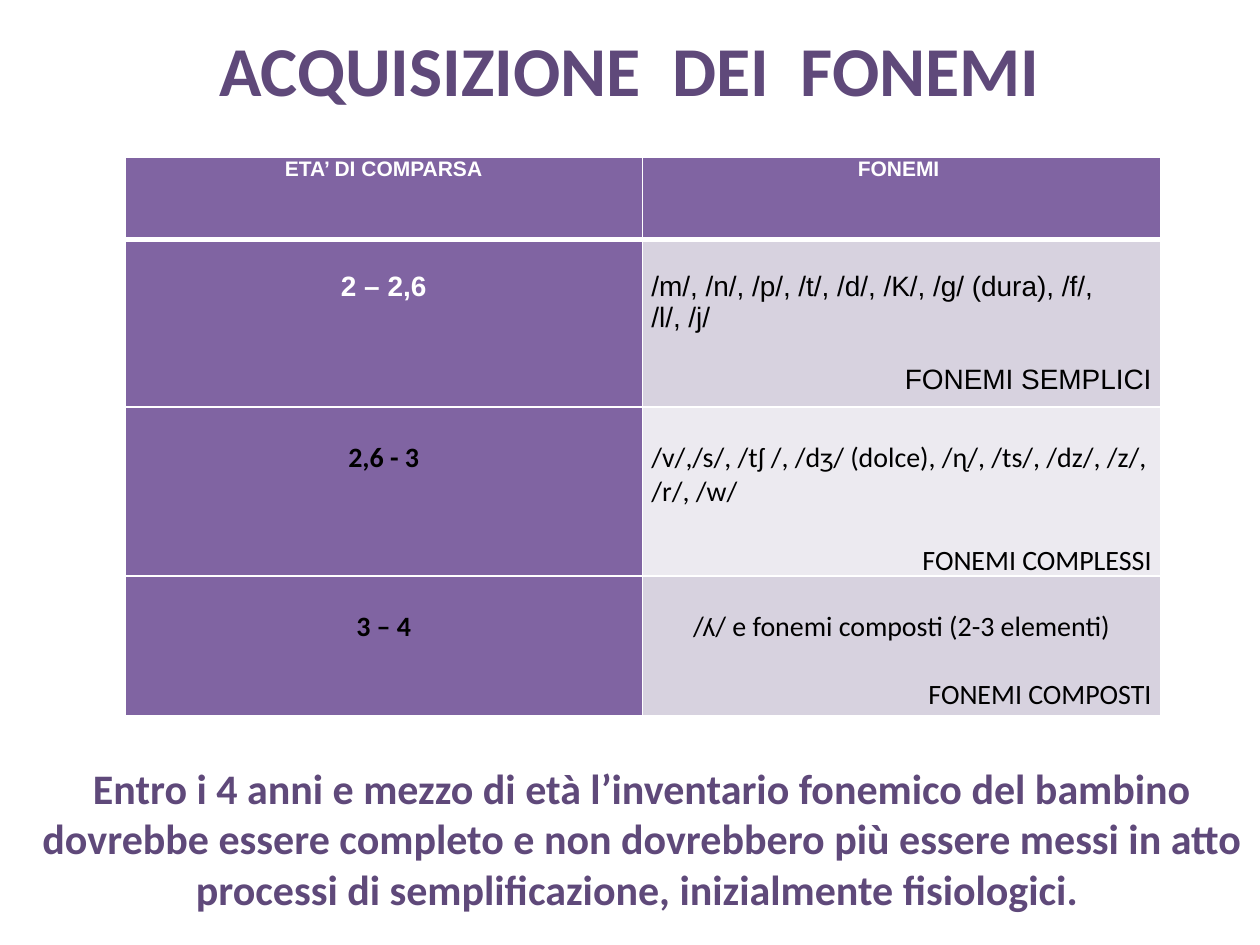
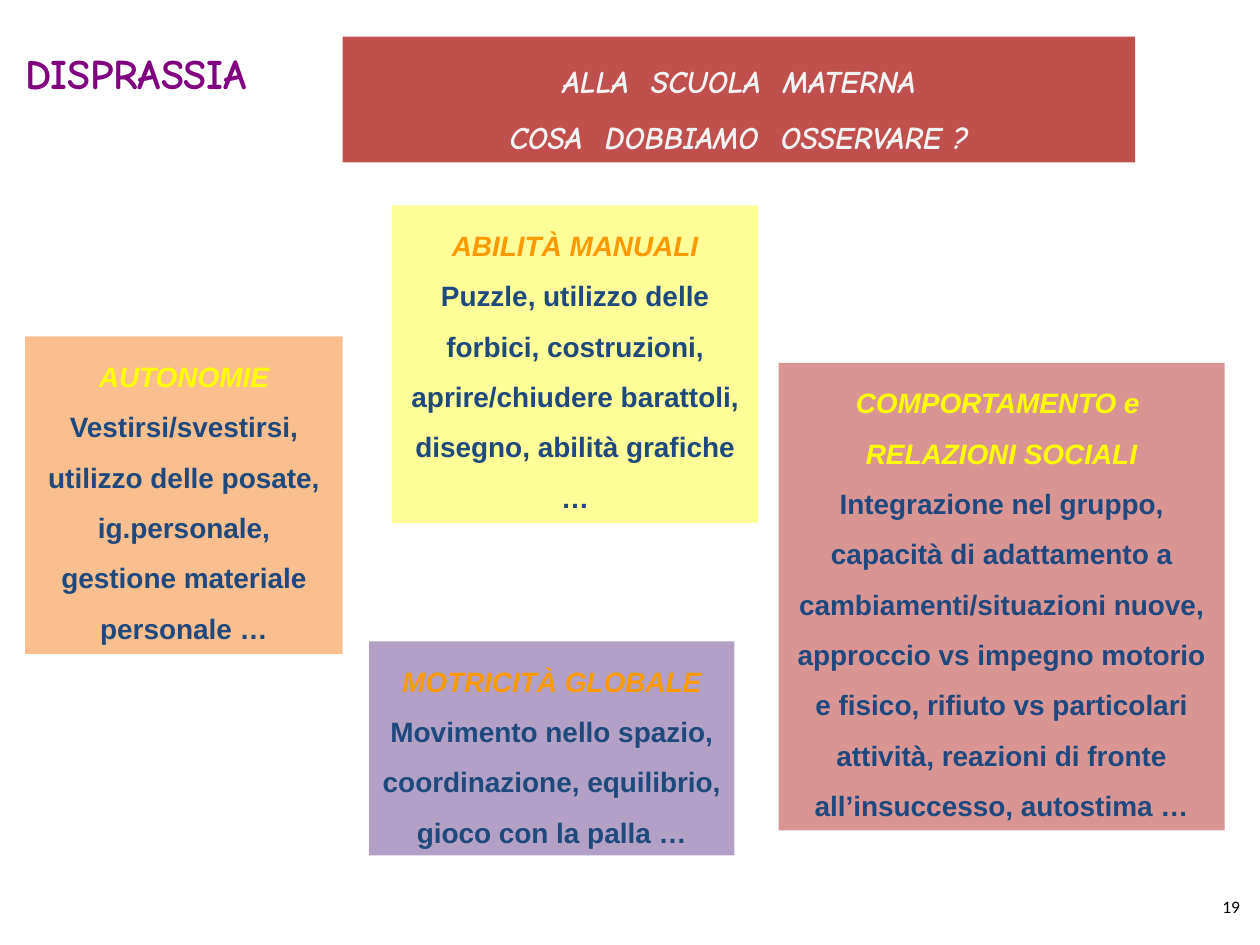
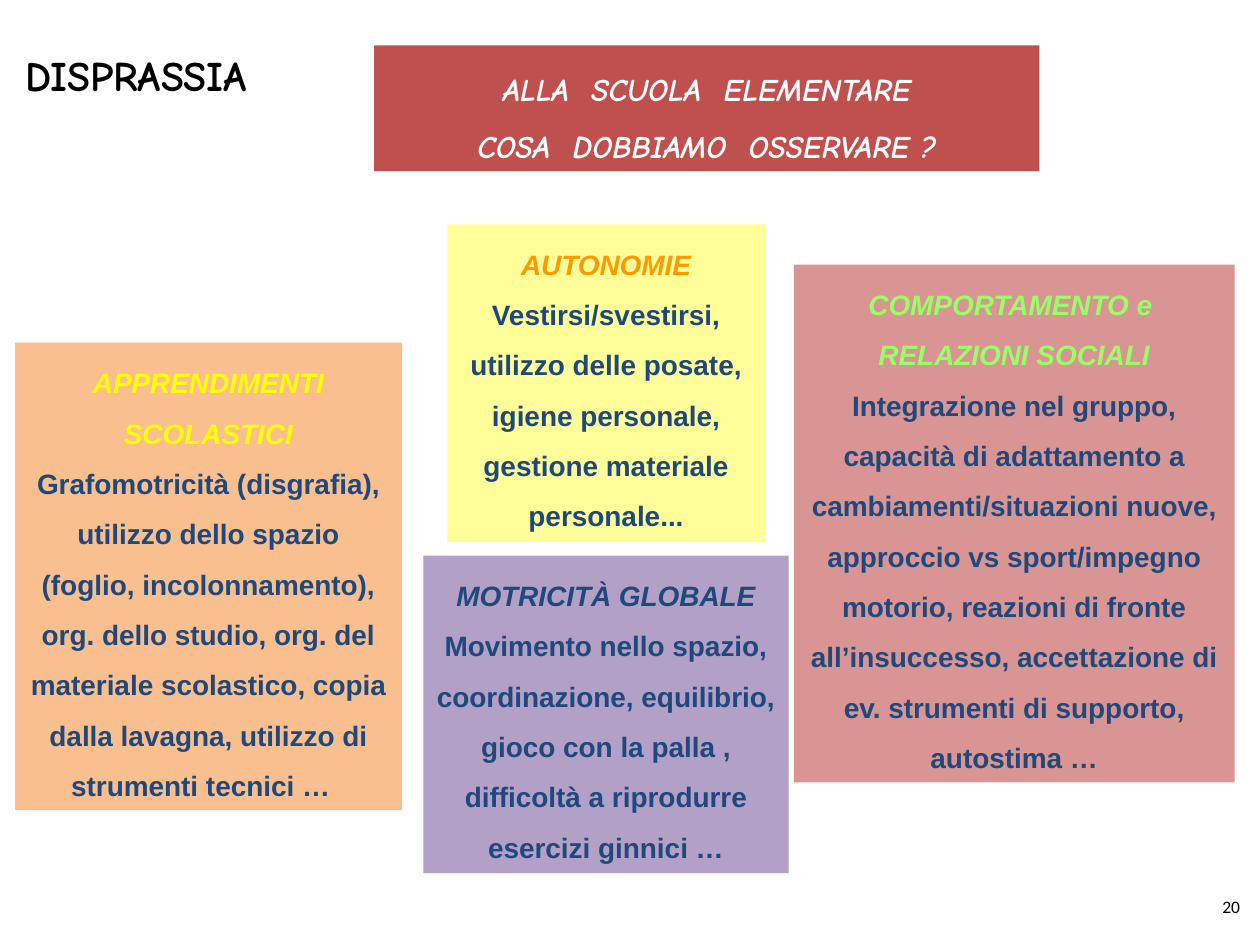
from pptx import Presentation
from pptx.dml.color import RGBColor
from pptx.enum import shapes, text
from pptx.oxml import parse_xml
from pptx.oxml.ns import nsdecls
from pptx.util import Inches, Pt

WHITE = RGBColor(0xFF, 0xFF, 0xFF)
BLACK = RGBColor(0, 0, 0)
PLUM = RGBColor(0x5F, 0x49, 0x7A)
VIOLET = RGBColor(0x80, 0x64, 0xA2)
LILAC = RGBColor(0xD7, 0xD2, 0xDF)
PALE_LILAC = RGBColor(0xEC, 0xEA, 0xF0)
PURPLE = RGBColor(0x80, 0, 0x80)
RED = RGBColor(0xC0, 0x50, 0x4D)
OFF_WHITE = RGBColor(0xF2, 0xF2, 0xF2)
PEACH = RGBColor(0xFA, 0xBF, 0x8E)
CREAM = RGBColor(0xFF, 0xFE, 0x99)
LAVENDER = RGBColor(0xB2, 0xA0, 0xC7)
ROSE = RGBColor(0xD9, 0x95, 0x93)
YELLOW = RGBColor(0xFF, 0xFF, 0)
ORANGE = RGBColor(0xFF, 0x99, 0)
GREEN = RGBColor(0x99, 0xFF, 0x66)
NAVY = RGBColor(0x1F, 0x49, 0x7D)

LEFT, CENTER, RIGHT = (text.PP_ALIGN.LEFT, text.PP_ALIGN.CENTER, text.PP_ALIGN.RIGHT)

HEADING = dict(name="Calibri", bold=True, color=PLUM)
TOPIC = dict(name="Comic Neue", size=24, bold=True)
BAND = dict(name="Comic Neue", size=18, bold=True, italic=True)
AREA = dict(name="Arial", size=16, bold=True)
PAGE_NUMBER = dict(name="Calibri", size=10, color=BLACK)
COLUMN_HEAD = dict(name="Arial", size=12, bold=True, color=WHITE)

PHONEME_TITLE = "ACQUISIZIONE  DEI  FONEMI"
PHONEME_SUMMARY = (
    "Entro i 4 anni e mezzo di età l’inventario fonemico del bambino dovrebbe essere "
    "completo e non dovrebbero più essere messi in atto processi di semplificazione, "
    "inizialmente fisiologici. ")
PHONEME_HEADS = ["ETA’ DI COMPARSA", "FONEMI "]
# age, phonemes, their alignment, group, font, age colour, fill, row height
PHONEME_ROWS = [
    ("2 – 2,6", "/m/, /n/, /p/, /t/, /d/, /K/, /g/ (dura), /f/, /l/, /j/", LEFT,
     "FONEMI SEMPLICI", "Arial", WHITE, LILAC, 1.33),
    ("2,6 - 3", "/v/,/s/, /tʃ /, /dʒ/ (dolce), /ɳ/, /ts/, /dz/, /z/, /r/, /w/", LEFT,
     "FONEMI COMPLESSI", "Calibri", BLACK, PALE_LILAC, 1.33),
    ("3 – 4", "/ʎ/ e fonemi composti (2-3 elementi)", CENTER,
     "FONEMI COMPOSTI", "Calibri", BLACK, LILAC, 1.11),
]
HEAD_HEIGHT = 0.65
LINE_HEIGHT = {"Arial": 0.25, "Calibri": 0.27}

SOCIAL = ["COMPORTAMENTO e ", "RELAZIONI SOCIALI"]
QUESTION = "COSA  DOBBIAMO  OSSERVARE ?"
# areas: place, fill, heading colour, heading lines, what to observe
SCHOOLS = [
    dict(number="19", topic_color=PURPLE, topic_top=0.13,
         school="ALLA  SCUOLA  MATERNA", band=(2.72, 0.29, 6.29, 1), band_color=OFF_WHITE,
         areas=[
             ((0.2, 2.67, 2.52, 2.52), PEACH, YELLOW, ["AUTONOMIE"],
              "Vestirsi/svestirsi, utilizzo delle posate, ig.personale, "
              "gestione materiale personale …"),
             ((3.11, 1.63, 2.91, 2.52), CREAM, ORANGE, ["ABILITÀ MANUALI"],
              "Puzzle, utilizzo delle forbici, costruzioni, aprire/chiudere barattoli, "
              "disegno, abilità grafiche …"),
             ((2.93, 5.09, 2.9, 1.7), LAVENDER, ORANGE, ["MOTRICITÀ GLOBALE"],
              "Movimento nello spazio, coordinazione, equilibrio, gioco con la palla …"),
             ((6.18, 2.88, 3.54, 3.71), ROSE, YELLOW, SOCIAL,
              "Integrazione nel gruppo, capacità di adattamento a cambiamenti/situazioni "
              "nuove, approccio vs impegno motorio e fisico, rifiuto vs particolari "
              "attività, reazioni di fronte all’insuccesso, autostima …"),
         ]),
    dict(number="20", topic_color=BLACK, topic_top=0.14,
         school="ALLA  SCUOLA  ELEMENTARE", band=(2.97, 0.36, 5.28, 1), band_color=WHITE,
         areas=[
             ((3.55, 1.78, 2.52, 2.52), CREAM, ORANGE, ["AUTONOMIE"],
              "Vestirsi/svestirsi, utilizzo delle posate, igiene personale, "
              "gestione materiale personale..."),
             ((3.36, 4.41, 2.9, 2.52), LAVENDER, NAVY, ["MOTRICITÀ GLOBALE"],
              "Movimento nello spazio, coordinazione, equilibrio, gioco con la palla , "
              "difficoltà a riprodurre esercizi ginnici …"),
             ((0.12, 2.72, 3.07, 3.71), PEACH, YELLOW, ["APPRENDIMENTI SCOLASTICI"],
              "Grafomotricità (disgrafia), utilizzo dello spazio (foglio, incolonnamento), "
              "org. dello studio, org. del materiale scolastico, copia dalla lavagna, "
              "utilizzo di strumenti tecnici …  "),
             ((6.3, 2.1, 3.5, 4.11), ROSE, GREEN, SOCIAL,
              "Integrazione nel gruppo, capacità di adattamento a cambiamenti/situazioni "
              "nuove, approccio vs sport/impegno motorio, reazioni di fronte "
              "all’insuccesso, accettazione di ev. strumenti di supporto, autostima …"),
         ]),
]


def write(frame, lines, spacing=None):
    """Fill a text frame with (words, alignment, format, inches before) lines."""
    for i, (words, align, style, before) in enumerate(lines):
        paragraph = frame.add_paragraph() if i else frame.paragraphs[0]
        paragraph.alignment = align
        if spacing:
            paragraph.line_spacing = spacing
        if before:
            paragraph.space_before = Inches(before)
        run = paragraph.add_run()
        run.text = words
        for key, value in style.items():
            if key == "color":
                run.font.color.rgb = value
            else:
                setattr(run.font, key, Pt(value) if key == "size" else value)


def add_box(slide, place, lines, fill=None, spacing=None, grow=True):
    place = [Inches(n) for n in place]
    if fill is None:
        box = slide.shapes.add_textbox(*place)
    else:
        box = slide.shapes.add_shape(shapes.MSO_SHAPE.RECTANGLE, *place)
        box.shadow.inherit = False
        box.fill.solid()
        box.fill.fore_color.rgb = fill
        box.line.fill.background()
    frame = box.text_frame
    frame.word_wrap = True
    frame.vertical_anchor = text.MSO_ANCHOR.TOP
    if grow:
        frame.auto_size = text.MSO_AUTO_SIZE.SHAPE_TO_FIT_TEXT
    write(frame, lines, spacing)


def fill_cell(cell, fill, lines, top=0, edges=(1, 1)):
    """Style a cell; edges are the top and bottom border widths in points."""
    properties = cell._tc.get_or_add_tcPr()
    for side, width in zip("LRTB", (1, 1, *edges)):
        properties.append(parse_xml(
            f'<a:ln{side} {nsdecls("a")} w="{Pt(width)}"><a:solidFill>'
            f'<a:srgbClr val="{WHITE}"/></a:solidFill></a:ln{side}>'))
    cell.fill.solid()
    cell.fill.fore_color.rgb = fill
    cell.margin_left = cell.margin_right = Inches(0.07)
    cell.margin_top, cell.margin_bottom = Inches(top), 0
    write(cell.text_frame, lines)


def add_phoneme_table(slide):
    heights = [HEAD_HEIGHT] + [row[-1] for row in PHONEME_ROWS]
    table = slide.shapes.add_table(len(heights), 2, Inches(0.99), Inches(1.25),
                                   Inches(8.22), Inches(sum(heights))).table
    table.horz_banding = False
    for row, height in zip(table.rows, heights):
        row.height = Inches(height)
    for column, head in enumerate(PHONEME_HEADS):
        fill_cell(table.cell(0, column), VIOLET, [(head, CENTER, COLUMN_HEAD, 0)],
                  edges=(1, 3))
    for i, (age, phonemes, align, group, font, color, fill, _) in enumerate(PHONEME_ROWS, 1):
        gap = LINE_HEIGHT[font]
        edges = (3 if i == 1 else 1, 1)
        plain = dict(name=font, size=16, bold=False, color=BLACK)
        bold = dict(plain, bold=True, color=color)
        fill_cell(table.cell(i, 0), VIOLET, [(age, CENTER, bold, 0)], gap, edges)
        fill_cell(table.cell(i, 1), fill,
                  [(phonemes, align, plain, 0), (group, RIGHT, plain, gap)], gap, edges)


def add_phoneme_slide(slide):
    add_box(slide, (1.09, 0.16, 7.81, 0.77),
            [(PHONEME_TITLE, CENTER, dict(HEADING, size=40), 0)])
    add_phoneme_table(slide)
    add_box(slide, (0.23, 6, 9.73, 1.31),
            [(PHONEME_SUMMARY, CENTER, dict(HEADING, size=24), 0)])


def add_school_slide(slide, number, topic_color, topic_top, school, band, band_color, areas):
    add_box(slide, (7.61, 7.06, 2.33, 0.36), [(number, RIGHT, PAGE_NUMBER, 0)], grow=False)
    band_style = dict(BAND, color=band_color)
    add_box(slide, band, [(line, CENTER, band_style, 0) for line in (school, QUESTION)],
            RED, 1.5)
    for place, fill, color, heading, observed in areas:
        lines = [(line, CENTER, dict(AREA, italic=True, color=color), 0) for line in heading]
        lines.append((observed, CENTER, dict(AREA, color=NAVY), 0))
        add_box(slide, place, lines, fill, 1.5)
    add_box(slide, (0.1, topic_top, 9.55, 0.66),
            [("DISPRASSIA", LEFT, dict(TOPIC, color=topic_color), 0)], spacing=1.5)


def main():
    deck = Presentation()
    deck.slide_width, deck.slide_height = Inches(10), Inches(7.5)
    blank = deck.slide_layouts[6]
    add_phoneme_slide(deck.slides.add_slide(blank))
    for school in SCHOOLS:
        add_school_slide(deck.slides.add_slide(blank), **school)
    deck.save("out.pptx")


if __name__ == "__main__":
    main()
